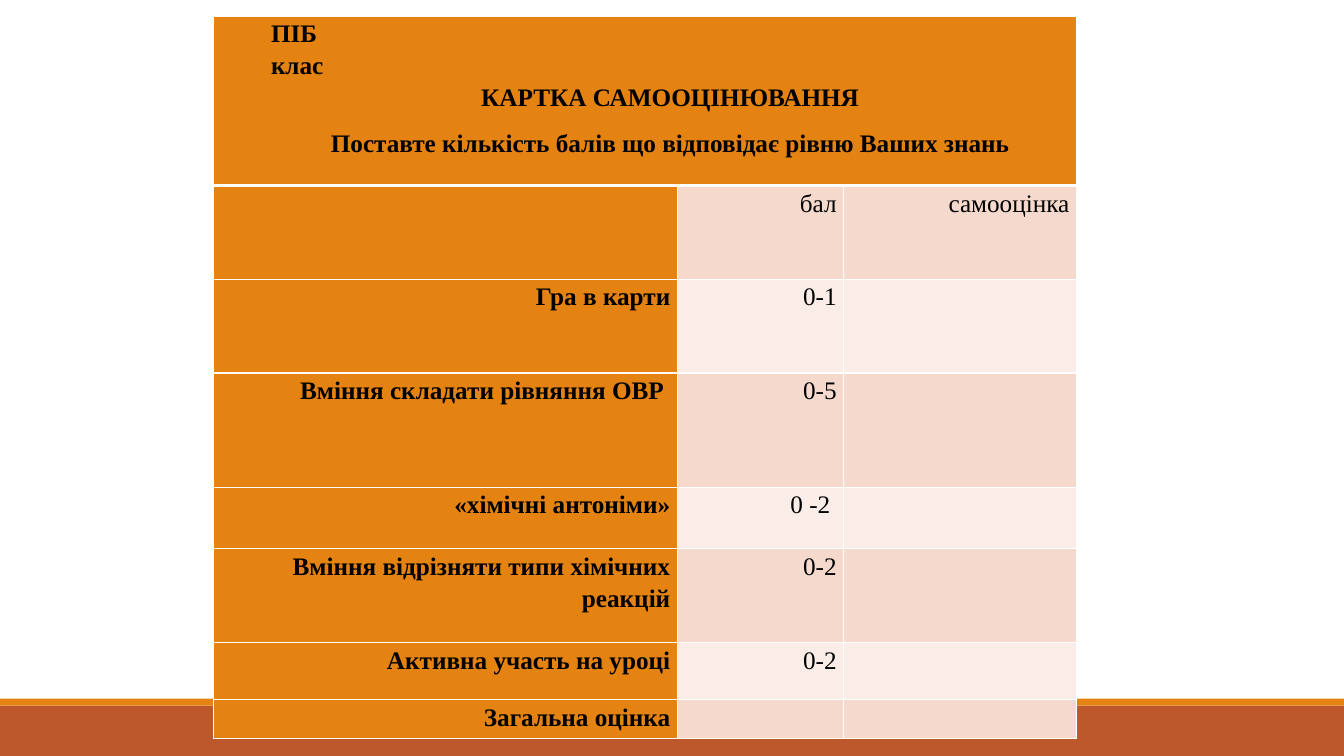
from dataclasses import dataclass

import lxml.etree
import pptx
import pptx.dml.color
import pptx.dml.fill
import pptx.enum.shapes
import pptx.enum.text
import pptx.oxml.ns
import pptx.slide
import pptx.table
import pptx.util

Pt = pptx.util.Pt
Align = pptx.enum.text.PP_ALIGN

ORANGE = "E48312"
RUST = "BD582C"
ROW_TINTS = ("F5D9CC", "FAEDE7")
WHITE = "FFFFFF"
BLACK = "000000"
FONT = "Times New Roman"

PAGE_WIDTH, PAGE_HEIGHT = 960, 540
TABLE_LEFT, TABLE_TOP = 152.6, 11.5
COLUMN_WIDTHS = (331.2, 118.8, 166.3)
HEADER_HEIGHT = 121
THIN, THICK = 1, 3


@dataclass(frozen=True)
class Band:
    top: float
    height: float
    color: str


@dataclass(frozen=True)
class Line:
    text: str
    align: Align = Align.RIGHT
    bold: bool = False
    space_after: float = 0


@dataclass(frozen=True)
class Criterion:
    height: float
    label: str
    points: str = ""
    mark: str = ""


BANDS = (Band(504, 36, RUST), Band(499, 5, ORANGE))

HEADER = (
    Line("ПІБ", Align.LEFT, True),
    Line("клас", Align.LEFT, True),
    Line("КАРТКА САМООЦІНЮВАННЯ", Align.CENTER, True, 10),
    Line("Поставте кількість балів що відповідає рівню Ваших знань", Align.CENTER, True, 10),
)

CRITERIA = (
    Criterion(67, "", "бал", "самооцінка"),
    Criterion(67, "Гра в карти", "0-1"),
    Criterion(81.5, "Вміння складати рівняння ОВР ", "0-5"),
    Criterion(44, "«хімічні антоніми»", "0 -2 "),
    Criterion(67, "Вміння відрізняти типи хімічних реакцій", "0-2"),
    Criterion(41, "Активна участь на уроці", "0-2"),
    Criterion(27.5, "Загальна оцінка"),
)


def paint(fill: pptx.dml.fill.FillFormat, color: str) -> None:
    fill.solid()
    fill.fore_color.rgb = pptx.dml.color.RGBColor.from_string(color)


def draw_band(page: pptx.slide.Slide, band: Band) -> None:
    box = page.shapes.add_shape(
        pptx.enum.shapes.MSO_SHAPE.RECTANGLE,
        0, Pt(band.top), Pt(PAGE_WIDTH), Pt(band.height),
    )
    box.shadow.inherit = False
    box.line.fill.background()
    paint(box.fill, band.color)


def add_borders(cell: pptx.table._Cell, top: float, bottom: float) -> None:
    qn = pptx.oxml.ns.qn
    properties = cell._tc.get_or_add_tcPr()
    for side, width in (("L", THIN), ("R", THIN), ("T", top), ("B", bottom)):
        border = lxml.etree.SubElement(properties, qn(f"a:ln{side}"), w=str(Pt(width)))
        solid = lxml.etree.SubElement(border, qn("a:solidFill"))
        lxml.etree.SubElement(solid, qn("a:srgbClr"), val=WHITE)


def fill_cell(
    cell: pptx.table._Cell,
    lines: tuple[Line, ...],
    color: str,
    top: float = THIN,
    bottom: float = THIN,
) -> None:
    add_borders(cell, top, bottom)
    paint(cell.fill, color)
    cell.margin_left = cell.margin_right = Pt(5)
    cell.margin_top = cell.margin_bottom = 0
    for index, line in enumerate(lines):
        frame = cell.text_frame
        para = frame.add_paragraph() if index else frame.paragraphs[0]
        para.alignment = line.align
        para.line_spacing = 1.15
        para.space_after = Pt(line.space_after)
        para.font.name = FONT
        para.font.size = Pt(18)
        para.font.bold = line.bold
        paint(para.font.fill, BLACK)
        para._p.get_or_add_pPr().set("marL", str(Pt(36)))
        if line.text:
            para.add_run().text = line.text


def draw_card(page: pptx.slide.Slide) -> None:
    heights = (HEADER_HEIGHT, *(criterion.height for criterion in CRITERIA))
    card = page.shapes.add_table(
        len(heights), len(COLUMN_WIDTHS),
        Pt(TABLE_LEFT), Pt(TABLE_TOP), Pt(sum(COLUMN_WIDTHS)), Pt(sum(heights)),
    ).table
    for column, width in zip(card.columns, COLUMN_WIDTHS):
        column.width = Pt(width)
    for row, height in zip(card.rows, heights):
        row.height = Pt(height)

    card.cell(0, 0).merge(card.cell(0, len(COLUMN_WIDTHS) - 1))
    for column in range(len(COLUMN_WIDTHS)):
        fill_cell(card.cell(0, column), () if column else HEADER, ORANGE, bottom=THICK)

    for index, criterion in enumerate(CRITERIA):
        tint = ROW_TINTS[index % 2]
        top = THIN if index else THICK
        lines = (Line(criterion.label, bold=True), Line(criterion.points), Line(criterion.mark))
        for column, (line, color) in enumerate(zip(lines, (ORANGE, tint, tint))):
            fill_cell(card.cell(index + 1, column), (line,), color, top=top)


def main() -> None:
    deck = pptx.Presentation()
    deck.slide_width, deck.slide_height = Pt(PAGE_WIDTH), Pt(PAGE_HEIGHT)
    page = deck.slides.add_slide(deck.slide_layouts[6])
    for band in BANDS:
        draw_band(page, band)
    draw_card(page)
    deck.save("out.pptx")


if __name__ == "__main__":
    main()
